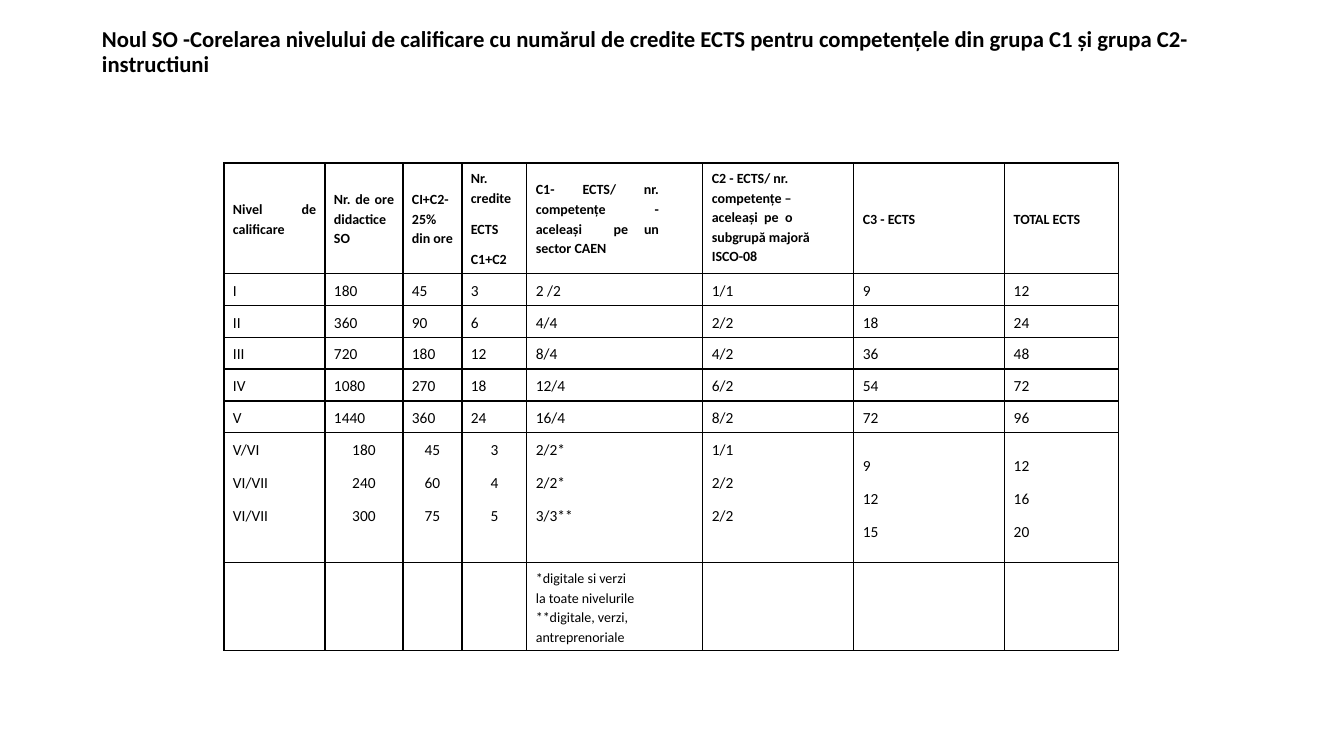
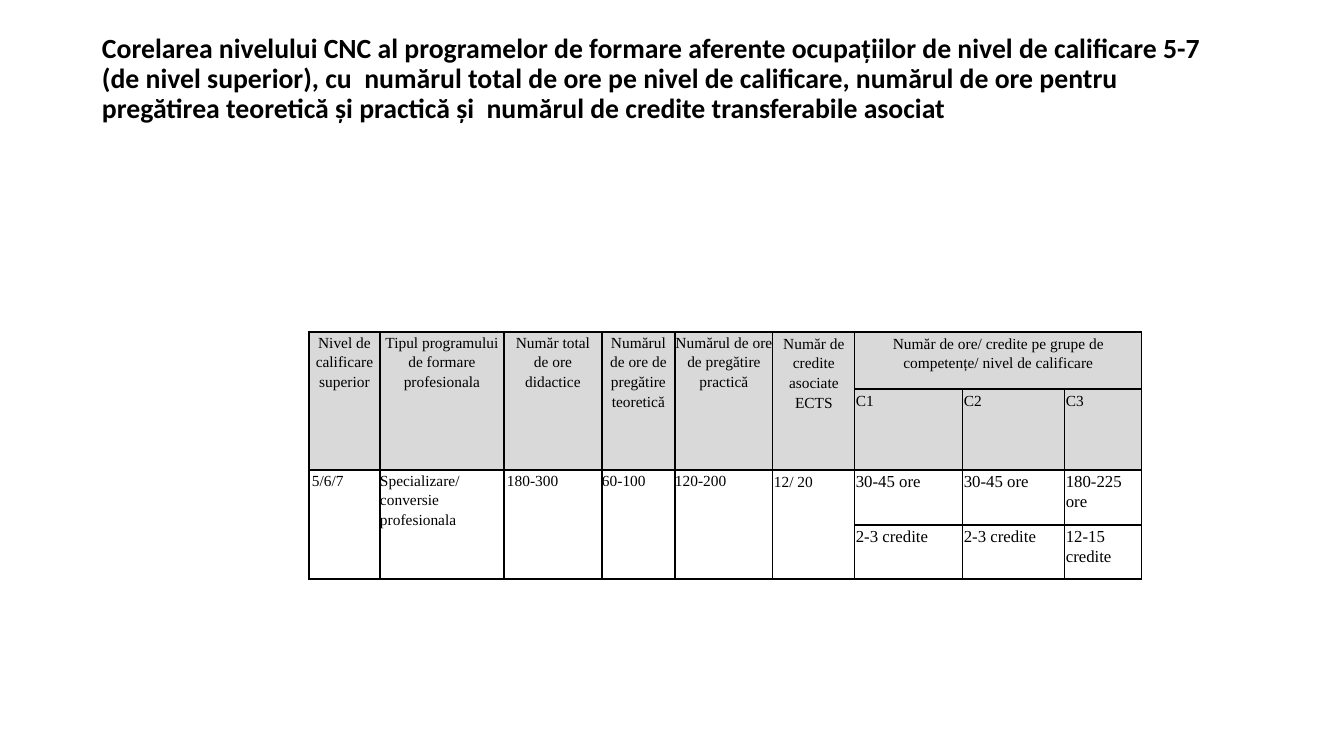
from itertools import product
from pptx import Presentation, util as u
from pptx.dml.color import RGBColor
from pptx.enum import text as t
from pptx.oxml import parse_xml
from pptx.oxml.ns import nsdecls

INK, GREY = "000000", "D9D9D9"
SANS, SERIF = "Calibri", "Times New Roman"
AL, ANC = t.PP_ALIGN, t.MSO_ANCHOR


def px(n):
    return u.Emu(round(n * 914400 / 100.8))


def rgb(code):
    return RGBColor.from_string(code)


def put(obj, **vals):
    for key, val in vals.items():
        setattr(obj, key, val)


def write(frame, words, size, face, bold=False, **para):
    """Fill a text frame, one paragraph per line of words."""
    frame.text = words
    for p in frame.paragraphs:
        put(p, **para)
        for run in p.runs:
            put(run.font, size=u.Pt(size), name=face, bold=bold)
            run.font.color.rgb = rgb(INK)


def head(slide, words, size, box):
    """Bold black title at the top left."""
    title = slide.shapes.title
    put(title, **dict(zip(("left", "top", "width", "height"), map(px, box))))
    frame = title.text_frame
    put(frame, word_wrap=True, auto_size=t.MSO_AUTO_SIZE.NONE, margin_top=0,
        margin_left=px(10), margin_right=px(10), vertical_anchor=ANC.TOP)
    write(frame, words, size, SANS, True, alignment=AL.LEFT, line_spacing=0.9)


def edge(cell, sides="LRTB"):
    """Draw the named sides in black and clear the others."""
    props = cell._tc.get_or_add_tcPr()
    for side in "LRTB":
        paint = (f'<a:solidFill><a:srgbClr val="{INK}"/></a:solidFill>'
                 if side in sides else "<a:noFill/>")
        props.append(parse_xml(
            f'<a:ln{side} {nsdecls("a")} w="12700">{paint}</a:ln{side}>'))


def grid(slide, left, top, cols, rows):
    """Plain table with the given column widths and row heights."""
    table = slide.shapes.add_table(
        len(rows), len(cols), px(left), px(top),
        px(sum(cols)), px(sum(rows))).table
    put(table, first_row=False, horz_banding=False)
    for col, wide in zip(table.columns, cols):
        col.width = px(wide)
    for row, high in zip(table.rows, rows):
        row.height = px(high)
    return table


def inset(cell, side, end):
    put(cell, margin_left=px(side), margin_right=px(side),
        margin_top=px(end), margin_bottom=px(end))


LEVELS = [
    ["Nivel de calificare", "Nr. de ore didactice SO", "CI+C2-25% din ore",
     "Nr. credite\nECTS\nC1+C2",
     "C1- ECTS/ nr. competențe - aceleași  pe un sector CAEN",
     "C2 - ECTS/ nr. competențe – aceleași  pe  o subgrupă majoră ISCO-08",
     "C3 - ECTS", "TOTAL ECTS"],
    ["I", "180", "45", "3", "2 /2", "1/1", "9", "12"],
    ["II", "360", "90", "6", "4/4", "2/2", "18", "24"],
    ["III", "720", "180", "12", "8/4", "4/2", "36", "48"],
    ["IV", "1080", "270", "18", "12/4", "6/2", "54", "72"],
    ["V", "1440", "360", "24", "16/4", "8/2", "72", "96"],
    ["V/VI\nVI/VII\nVI/VII", "180\n240\n300", "45\n60\n75", "3\n4\n5",
     "2/2*\n2/2*\n3/3**", "1/1\n2/2\n2/2", "9\n12\n15", "12\n16\n20"],
    ["", "", "", "",
     "*digitale si verzi\nla toate nivelurile\n"
     "**digitale, verzi, antreprenoriale", "", "", ""],
]


def levels(slide, left, top):
    """Credits for each qualification level."""
    table = grid(slide, left, top, [101, 78, 59, 65, 176, 151, 151, 114],
                 [110, 32, 31, 31, 32, 31, 130, 88])
    first, mixed, notes = 0, 6, 7
    for r, c in product(range(8), range(8)):
        cell = table.cell(r, c)
        edge(cell)
        cell.fill.background()
        inset(cell, 9, 5)
        if c in (4, 5):
            cell.margin_right = px(44)
        high = r == notes or (r == mixed and c < 6) or (r, c) == (first, 5)
        cell.vertical_anchor = ANC.TOP if high else ANC.MIDDLE
        if r == mixed and c in (1, 2, 3):
            align = AL.CENTER
        else:
            align = AL.LEFT if high else AL.JUSTIFY
        if LEVELS[r][c]:
            write(cell.text_frame, LEVELS[r][c],
                  10 if r in (first, notes) else 11, SANS, r == first,
                  alignment=align, line_spacing=1.15,
                  space_after=u.Pt(0 if r == notes else 8))


HOURS = [
    ["", "Nivel de calificare superior",
     "Tipul programului de formare profesionala",
     "Număr total de ore\ndidactice", "Numărul de ore de pregătire teoretică",
     "Numărul de ore de pregătire practică", "Număr de credite asociate ECTS",
     "Număr de ore/ credite pe grupe de competențe/ nivel de calificare",
     "", ""],
    [""] * 7 + ["C1", "C2", "C3"],
    ["", "5/6/7", "Specializare/conversie profesionala", "180-300", "60-100",
     "120-200", "12/ 20", "30-45 ore", "30-45 ore", "180-225 ore"],
    [""] * 7 + ["2-3 credite", "2-3 credite", "12-15 credite"],
]


def hours(slide, left, top):
    """Hours and credits for higher-level programmes."""
    table = grid(slide, left, top,
                 [107, 71, 124, 98, 73, 98, 82, 108, 102, 77],
                 [57, 81, 55, 54])
    sides = [0, 3, 0, 3, 0, 0, 1, 1, 1, 1]
    for r, c in product(range(4), range(10)):
        cell = table.cell(r, c)
        edge(cell, "LRTB" if c else "R")
        if c and r < 2:
            cell.fill.solid()
            cell.fill.fore_color.rgb = rgb(GREY)
        else:
            cell.fill.background()
        inset(cell, sides[c], 1 if c > 5 else 0)
        cell.vertical_anchor = ANC.TOP
        if HOURS[r][c]:
            big = r > 1 and c > 6
            write(cell.text_frame, HOURS[r][c], 12 if big else 11, SERIF,
                  alignment=AL.LEFT if r else AL.CENTER,
                  line_spacing=1.07 if big else 1.15)
    # Joined cells
    for r, c in product((0, 2), range(7)):
        table.cell(r, c).merge(table.cell(r + 1, c))
    table.cell(0, 7).merge(table.cell(0, 9))


def main():
    deck = Presentation()
    put(deck, slide_width=px(1344), slide_height=px(756))
    pages = [
        ("Noul SO -Corelarea nivelului de calificare cu numărul de credite "
         "ECTS pentru competențele din grupa C1 și grupa C2-instructiuni",
         16.2, (92, 28, 1159, 63), levels, (224, 163)),
        ("Corelarea nivelului CNC al programelor de formare aferente "
         "ocupațiilor de nivel de calificare 5-7 (de nivel superior), cu  "
         "numărul total de ore pe nivel de calificare, numărul de ore pentru "
         "pregătirea teoretică și practică și  numărul de credite "
         "transferabile asociat",
         19.8, (92, 35, 1159, 152), hours, (202, 332)),
    ]
    for words, size, box, body, spot in pages:
        slide = deck.slides.add_slide(deck.slide_layouts[5])
        head(slide, words, size, box)
        body(slide, *spot)
    deck.save("out.pptx")


if __name__ == "__main__":
    main()
